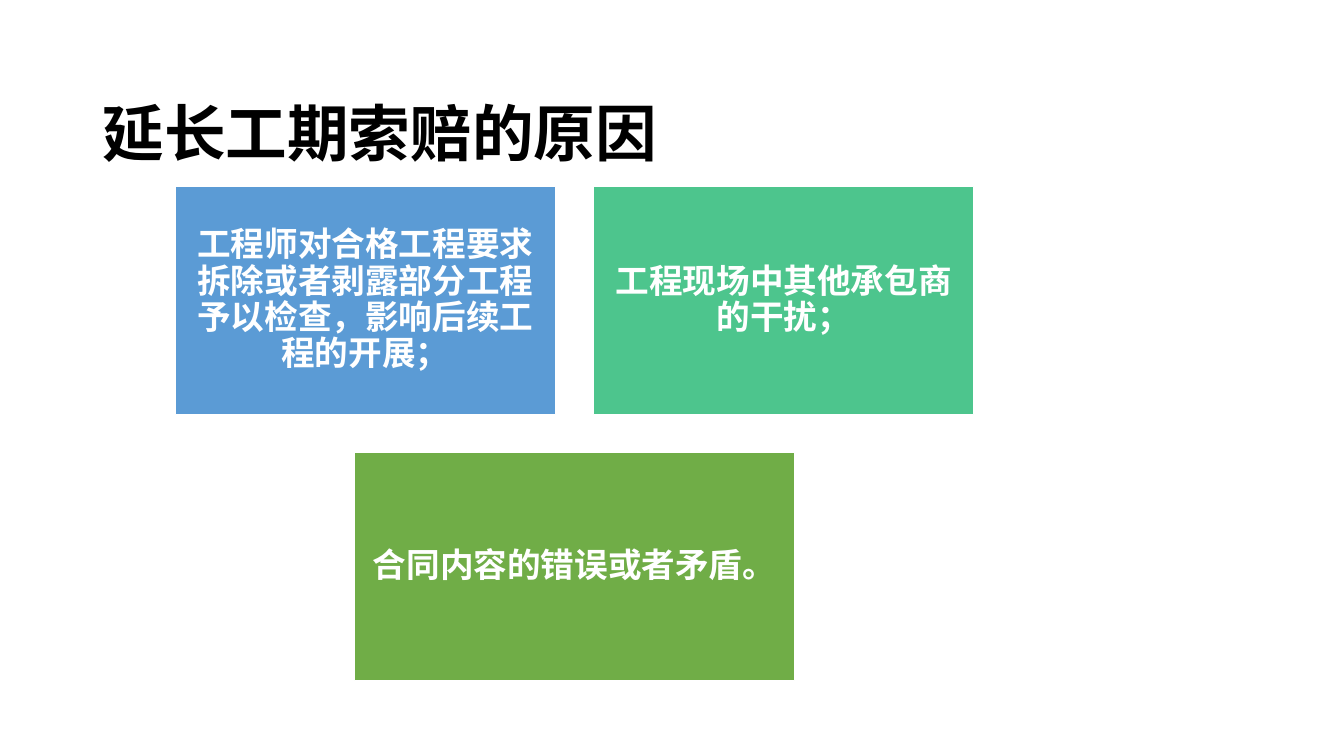
"""Build the slide on reasons for claiming an extension of time."""
from pptx import Presentation
from pptx.dml.color import RGBColor
from pptx.enum.shapes import MSO_SHAPE
from pptx.enum.text import MSO_ANCHOR, PP_ALIGN
from pptx.util import Pt

BLACK = RGBColor(0x00, 0x00, 0x00)
WHITE = RGBColor(0xFF, 0xFF, 0xFF)
BLUE = RGBColor(0x5B, 0x9B, 0xD5)
TEAL = RGBColor(0x4D, 0xC5, 0x8D)
GREEN = RGBColor(0x70, 0xAD, 0x47)

FONT = "Times New Roman"
TITLE = "延长工期索赔的原因"
NARROW, WIDE = 271.4, 314
ROWS = [
    (NARROW, [
        ("工程师对合格工程要求拆除或者剥露部分工程予以检查，影响后续工程的开展；", BLUE),
        ("工程现场中其他承包商的干扰；", TEAL),
    ]),
    (WIDE, [("合同内容的错误或者矛盾。", GREEN)]),
]
CENTER, TOP, HEIGHT, GAP = 410.4, 133.2, 162.8, 27.4


def write(tf, text, size, color, align, spacing, after=0):
    """Write one bold, vertically centred paragraph."""
    tf.word_wrap = True
    tf.vertical_anchor = MSO_ANCHOR.MIDDLE
    p = tf.paragraphs[0]
    p.alignment = align
    p.line_spacing = spacing
    p.space_before = Pt(0)
    p.space_after = Pt(after)
    r = p.add_run()
    r.text = text
    r.font.name = FONT
    r.font.size = Pt(size)
    r.font.bold = True
    r.font.color.rgb = color


def add_reason(s, text, fill, left, top, width):
    """Add one filled reason box."""
    sp = s.shapes.add_shape(MSO_SHAPE.RECTANGLE, Pt(left), Pt(top), Pt(width), Pt(HEIGHT))
    sp.shadow.inherit = False
    sp.fill.solid()
    sp.fill.fore_color.rgb = fill
    sp.line.color.rgb = WHITE
    sp.line.width = Pt(1)
    tf = sp.text_frame
    tf.margin_left = tf.margin_right = tf.margin_top = tf.margin_bottom = Pt(7.2)
    write(tf, text, size=24, color=WHITE, align=PP_ALIGN.CENTER, spacing=0.9, after=8.4)


def main():
    """Lay out the title and the centred rows of reasons."""
    prs = Presentation()
    prs.slide_width, prs.slide_height = Pt(960), Pt(540)
    s = prs.slides.add_slide(prs.slide_layouts[5])
    title = s.shapes.title
    title.left, title.top, title.width, title.height = Pt(66), Pt(28.8), Pt(828), Pt(104.4)
    write(title.text_frame, TITLE, size=44, color=BLACK, align=PP_ALIGN.LEFT, spacing=1.5)
    for i, (width, reasons) in enumerate(ROWS):
        row_width = len(reasons) * (width + GAP) - GAP
        for j, (text, fill) in enumerate(reasons):
            left = CENTER - row_width / 2 + j * (width + GAP)
            add_reason(s, text, fill, left, TOP + i * (HEIGHT + GAP), width)
    prs.save("out.pptx")


if __name__ == "__main__":
    main()
